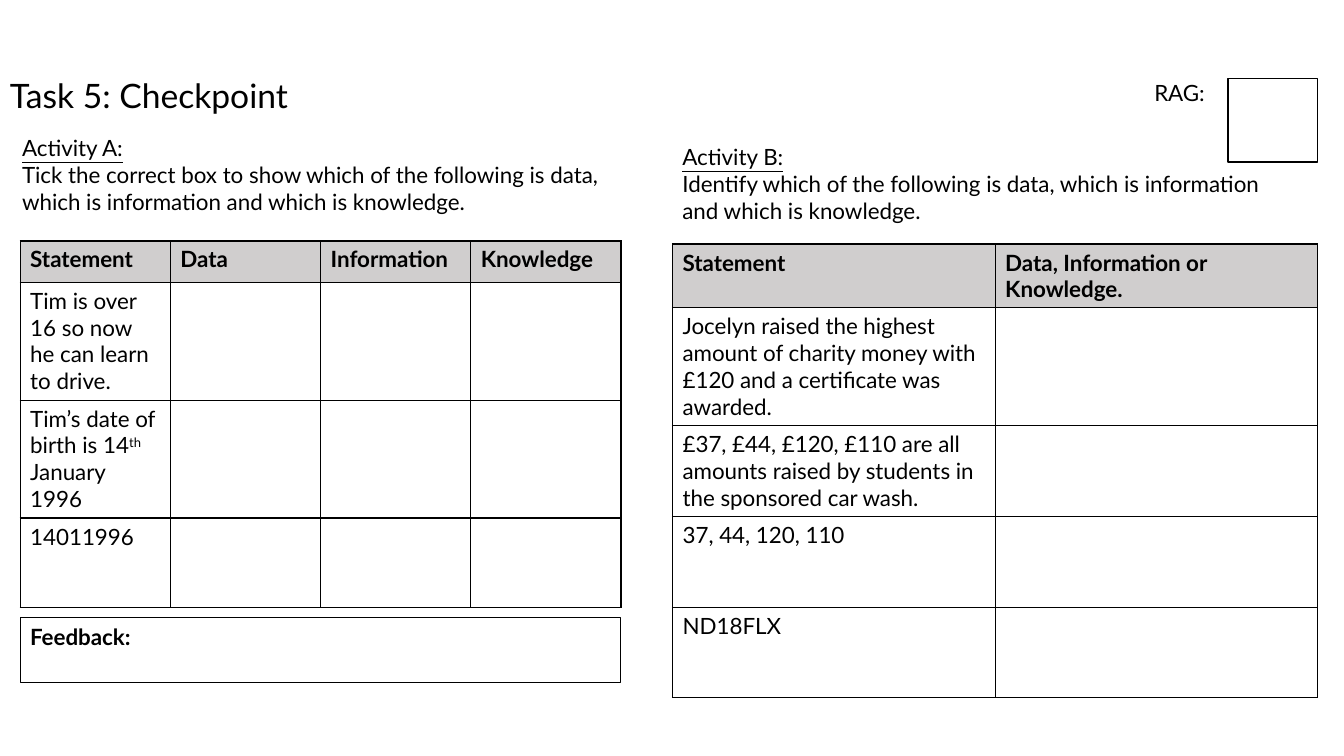
from dataclasses import dataclass

from lxml.etree import SubElement
from pptx import Presentation
from pptx.dml.color import RGBColor
from pptx.enum.shapes import MSO_SHAPE as Preset
from pptx.enum.text import MSO_ANCHOR as Anchor, MSO_AUTO_SIZE as AutoSize, PP_ALIGN as Align
from pptx.oxml.ns import qn
from pptx.slide import Slide
from pptx.table import _Cell as Cell
from pptx.text.text import TextFrame
from pptx.util import Inches, Pt

FONT = "Lato"
BLACK, WHITE, HEADER_GREY = "000000", "FFFFFF", "D0CECE"
SUPERSCRIPT_MARK = "^"


@dataclass
class Label:
    left: float
    top: float
    width: float
    height: float
    lines: list[str]
    size: int = 16
    underline_first: bool = False


@dataclass
class Box:
    left: float
    top: float
    width: float
    height: float
    line_width: float
    text: str = ""


@dataclass
class Grid:
    left: float
    top: float
    column_width: float
    row_heights: list[float]
    headings: list[str]
    statements: list[str]


LABELS = [
    Label(0, 0.69, 8.55, 0.5, ["Task 5: Checkpoint"], size=24),
    Label(11.35, 0.74, 0.8, 0.37, ["RAG:"]),
    Label(0.12, 1.28, 5.95, 0.91, [
        "Activity A:",
        "Tick the correct box to show which of the following is data, "
        "which is information and which is knowledge.",
    ], underline_first=True),
    Label(6.67, 1.37, 5.95, 0.91, [
        "Activity B:",
        "Identify which of the following is data, which is information and which is knowledge.",
    ], underline_first=True),
]

BOXES = [
    Box(0.2, 6.13, 5.95, 0.64, 0.75, "Feedback:"),
    Box(12.18, 0.78, 0.89, 0.83, 1),
]

GRIDS = [
    Grid(0.2, 2.39, 1.49, [0.41, 1.17, 1.17, 0.89],
         ["Statement", "Data", "Information", "Knowledge"],
         ["Tim is over 16 so now he can learn to drive.",
          "Tim’s date of birth is 14^th^ January 1996",
          "14011996"]),
    Grid(6.67, 2.42, 3.2, [0.63, 1.17, 0.9, 0.9, 0.9],
         ["Statement", "Data, Information or Knowledge."],
         ["Jocelyn raised the highest amount of charity money with £120 "
          "and a certificate was awarded.",
          "£37, £44, £120, £110 are all amounts raised by students in the sponsored car wash.",
          "37, 44, 120, 110",
          "ND18FLX"]),
]


def color(value: str) -> RGBColor:
    return RGBColor.from_string(value)


def write(frame: TextFrame, lines: list[str], size: int = 16, bold: bool = False,
          underline_first: bool = False) -> None:
    for number, line in enumerate(lines):
        paragraph = frame.add_paragraph() if number else frame.paragraphs[0]
        paragraph.alignment = Align.LEFT
        first, *rest = line.split(SUPERSCRIPT_MARK)
        paragraph.text = first
        for part in rest:
            paragraph.add_run().text = part
        for position, run in enumerate(paragraph.runs):
            run.font.name = FONT
            run.font.size = Pt(size)
            run.font.bold = bold
            run.font.underline = underline_first and number == 0
            run.font.color.rgb = color(BLACK)
            if position % 2:
                run._r.get_or_add_rPr().set("baseline", "30000")


def add_label(slide: Slide, label: Label) -> None:
    shape = slide.shapes.add_textbox(Inches(label.left), Inches(label.top),
                                     Inches(label.width), Inches(label.height))
    shape.text_frame.word_wrap = True
    shape.text_frame.auto_size = AutoSize.SHAPE_TO_FIT_TEXT
    write(shape.text_frame, label.lines, label.size, underline_first=label.underline_first)


def add_box(slide: Slide, box: Box) -> None:
    shape = slide.shapes.add_shape(Preset.RECTANGLE, Inches(box.left), Inches(box.top),
                                   Inches(box.width), Inches(box.height))
    shape.shadow.inherit = False
    shape.fill.solid()
    shape.fill.fore_color.rgb = color(WHITE)
    shape.line.color.rgb = color(BLACK)
    shape.line.width = Pt(box.line_width)
    if box.text:
        shape.text_frame.vertical_anchor = Anchor.TOP
        write(shape.text_frame, [box.text], bold=True)


def add_borders(cell: Cell) -> None:
    properties = cell._tc.get_or_add_tcPr()
    for side in ("a:lnL", "a:lnR", "a:lnT", "a:lnB"):
        border = SubElement(properties, qn(side), w=str(Pt(1)))
        fill = SubElement(border, qn("a:solidFill"))
        SubElement(fill, qn("a:srgbClr"), val=BLACK)


def add_grid(slide: Slide, grid: Grid) -> None:
    column_count = len(grid.headings)
    shape = slide.shapes.add_table(
        len(grid.row_heights), column_count, Inches(grid.left), Inches(grid.top),
        Inches(grid.column_width * column_count), Inches(sum(grid.row_heights)))
    table = shape.table
    table.first_row = table.horz_banding = False
    for column in table.columns:
        column.width = Inches(grid.column_width)
    for row, height in zip(table.rows, grid.row_heights):
        row.height = Inches(height)
    for cell in table.iter_cells():
        add_borders(cell)
        cell.fill.solid()
        cell.fill.fore_color.rgb = color(WHITE)
    for index, heading in enumerate(grid.headings):
        cell = table.cell(0, index)
        cell.fill.fore_color.rgb = color(HEADER_GREY)
        write(cell.text_frame, [heading], bold=True)
    for index, statement in enumerate(grid.statements, start=1):
        write(table.cell(index, 0).text_frame, [statement])


def main() -> None:
    presentation = Presentation()
    presentation.slide_width = Inches(13.33)
    presentation.slide_height = Inches(7.5)
    slide = presentation.slides.add_slide(presentation.slide_layouts[6])
    for box in BOXES:
        add_box(slide, box)
    for label in LABELS:
        add_label(slide, label)
    for grid in GRIDS:
        add_grid(slide, grid)
    presentation.save("out.pptx")


if __name__ == "__main__":
    main()
